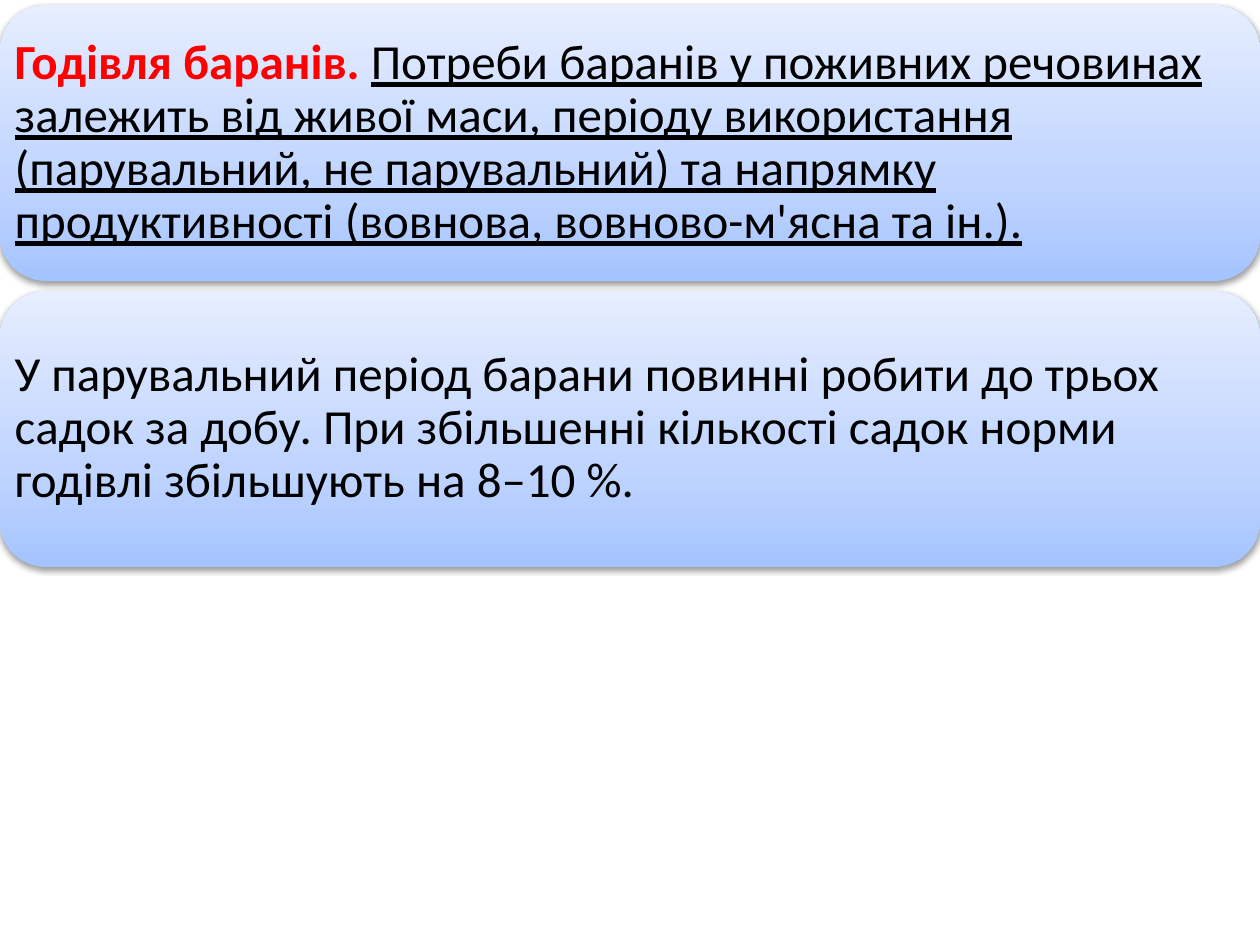
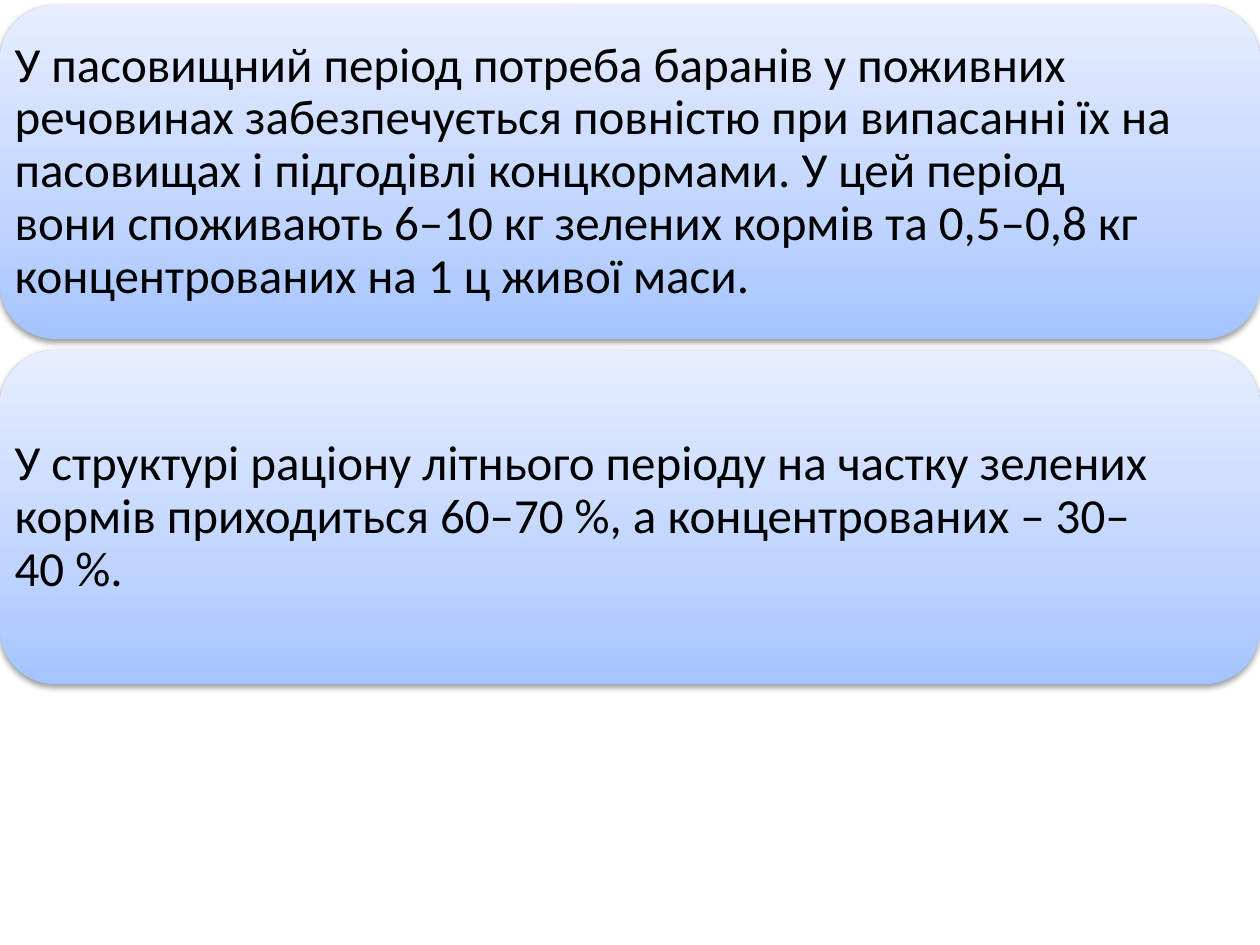
from lxml import etree
from pptx import Presentation
from pptx.dml.color import RGBColor
from pptx.enum.shapes import MSO_SHAPE
from pptx.enum.text import MSO_ANCHOR
from pptx.oxml.ns import qn
from pptx.util import Inches, Pt

ROUNDED = MSO_SHAPE.ROUNDED_RECTANGLE
MIDDLE = MSO_ANCHOR.MIDDLE

BLACK = RGBColor(0x00, 0x00, 0x00)
RED = RGBColor(0xFF, 0x00, 0x00)
PANEL_STOPS = (
    (0, RGBColor(0xA4, 0xC4, 0xFF)),
    (35, RGBColor(0xBF, 0xD4, 0xFF)),
    (100, RGBColor(0xE6, 0xEE, 0xFF)),
)
FONT = "Calibri"
TEXT_SIZE = Pt(28)
INSET = Pt(8.4)
SLIDE_W, SLIDE_H = 10, 7.5
NBSP = chr(160)

HEADING = f"Годівля баранів.{NBSP}"
RAM_NEEDS = (
    "Потреби баранів у поживних речовинах залежить від живої маси, періоду "
    "використання (парувальний, не парувальний) та напрямку продуктивності "
    "(вовнова, вовново-м'ясна та ін.)."
)
MATING_PERIOD = (
    "У парувальний період барани повинні робити до трьох садок за добу. "
    f"При збільшенні кількості садок норми годівлі збільшують на 8–10{NBSP}%."
)
GRAZING_PERIOD = (
    "У пасовищний період потреба баранів у поживних речовинах забезпечується "
    "повністю при випасанні їх на пасовищах і підгодівлі концкормами. "
    f"У цей період вони{NBSP}споживають 6–10{NBSP}кг зелених кормів та "
    f"0,5–0,8{NBSP}кг концентрованих на 1{NBSP}ц живої маси."
)
SUMMER_RATION = (
    "У структурі раціону літнього періоду на частку зелених кормів "
    f"приходиться 60–70{NBSP}%, а концентрованих – 30–40{NBSP}%.{NBSP}"
)


def add_color(parent, color):
    """Append an RGB colour element and return it."""
    return etree.SubElement(parent, qn("a:srgbClr"), val=str(color))


def fill_panel(sp):
    """Give a panel its three-stop vertical gradient."""
    sp.fill.gradient()
    sp.fill.gradient_angle = 90
    stops = sp._element.spPr.find(".//" + qn("a:gsLst"))
    for stop in list(stops):
        stops.remove(stop)
    for percent, color in PANEL_STOPS:
        gs = etree.SubElement(stops, qn("a:gs"), pos=str(percent * 1000))
        add_color(gs, color)


def shade_panel(sp):
    """Give a panel its soft shadow straight below."""
    sp.shadow.inherit = False
    effects = sp._element.spPr.find(qn("a:effectLst"))
    shadow = etree.SubElement(
        effects, qn("a:outerShdw"), blurRad=str(Pt(3.1)), dist=str(Pt(1.6)),
        dir="5400000", rotWithShape="0")
    etree.SubElement(add_color(shadow, BLACK), qn("a:alpha"), val="38000")


def add_panel(s, box, parts):
    """Draw a rounded panel with one paragraph of (text, is_heading) parts."""
    place = [Inches(v) for v in box]
    sp = s.shapes.add_shape(ROUNDED, *place)
    fill_panel(sp)
    sp.line.fill.background()
    shade_panel(sp)

    tf = s.shapes.add_textbox(*place).text_frame
    tf.word_wrap = True
    tf.vertical_anchor = MIDDLE
    tf.margin_left = tf.margin_right = INSET
    tf.margin_top = tf.margin_bottom = INSET
    p = tf.paragraphs[0]
    p.line_spacing = 0.9
    p.space_after = Pt(9.8)
    for text, is_heading in parts:
        r = p.add_run()
        r.text = text
        r.font.name = FONT
        r.font.size = TEXT_SIZE
        r.font.bold = is_heading
        r.font.underline = len(parts) > 1 and not is_heading
        r.font.color.rgb = RED if is_heading else BLACK


def add_panel_slide(prs, top, height, gap, panels):
    """Add a slide of equal full-width panels stacked from the top."""
    s = prs.slides.add_slide(prs.slide_layouts[6])
    for i, parts in enumerate(panels):
        add_panel(s, (0, top + i * (height + gap), SLIDE_W, height), parts)


def main():
    """Build both slides and save the presentation."""
    prs = Presentation()
    prs.slide_width = Inches(SLIDE_W)
    prs.slide_height = Inches(SLIDE_H)
    add_panel_slide(prs, 0.04, 2.19, 0.08, [
        [(HEADING, True), (RAM_NEEDS, False)],
        [(MATING_PERIOD, False)],
    ])
    add_panel_slide(prs, 0.04, 2.65, 0.09, [
        [(GRAZING_PERIOD, False)],
        [(SUMMER_RATION, False)],
    ])
    prs.save("out.pptx")


if __name__ == "__main__":
    main()
